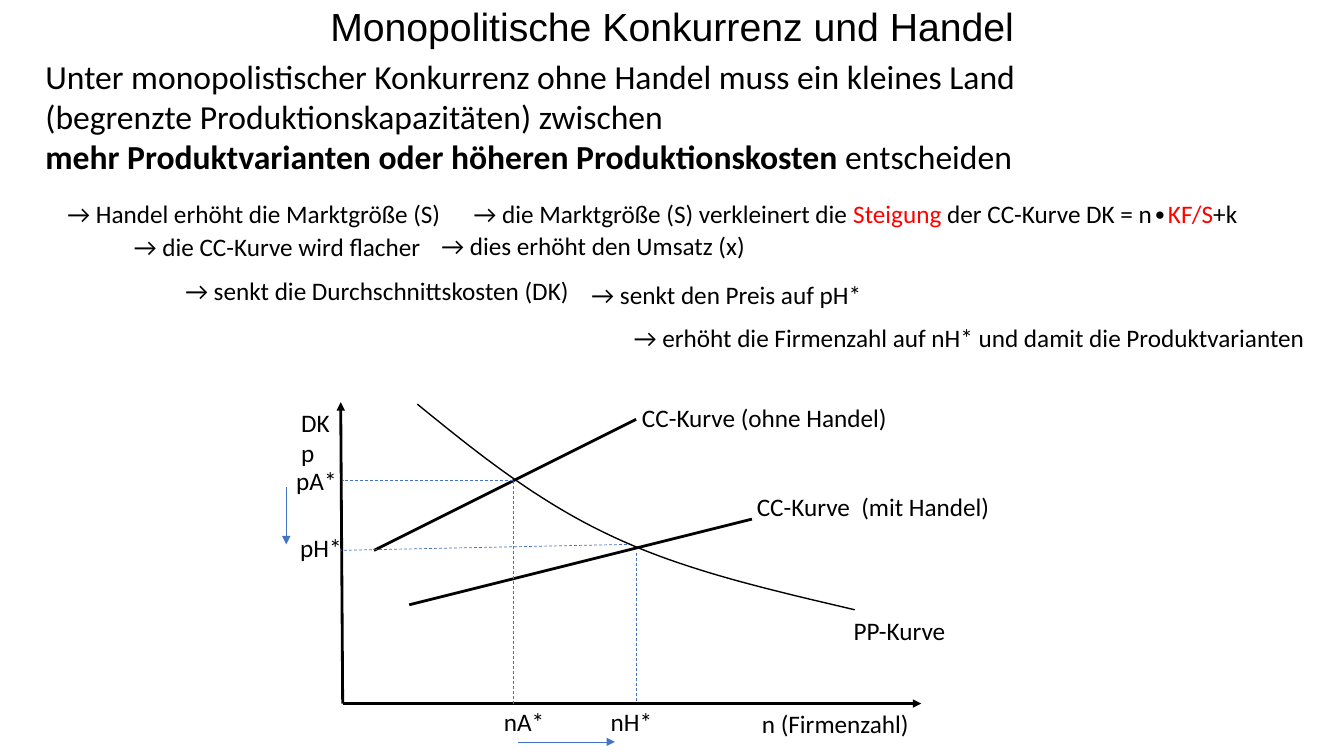
from dataclasses import dataclass

from lxml.etree import SubElement
from pptx import Presentation
from pptx.dml.color import RGBColor
from pptx.enum.dml import MSO_LINE
from pptx.enum.shapes import MSO_CONNECTOR
from pptx.enum.text import MSO_ANCHOR, MSO_AUTO_SIZE, PP_ALIGN
from pptx.oxml.ns import qn
from pptx.util import Inches, Pt

COLORS = {"ink": "000000", "guide": "4472C4", "accent": "FF0000"}

presentation = Presentation()
presentation.slide_width, presentation.slide_height = Inches(13.33), Inches(7.5)
slide = presentation.slides.add_slide(presentation.slide_layouts[1])

# Grid of 40 columns and 30 rows
COLUMN = presentation.slide_width / 40
ROW = presentation.slide_height / 30

Point = tuple[float, float]
Run = tuple[str, dict]


@dataclass
class Label:
    column: float
    row: float
    columns: float
    paragraphs: list[list[Run]]
    rows: float = 1.6


@dataclass
class Stroke:
    start: Point
    end: Point
    color: str = "ink"
    width: float = 2
    arrow: bool = False
    dashed: bool = False


def to_emu(point: Point) -> tuple[int, int]:
    return round(point[0] * COLUMN), round(point[1] * ROW)


def place(shape, column: float, row: float, columns: float, rows: float) -> None:
    shape.left, shape.top = to_emu((column, row))
    shape.width, shape.height = to_emu((columns, rows))


def apply(target, values: dict) -> None:
    for name, value in values.items():
        setattr(target, name, value)


def add_runs(paragraph, runs: list[Run], size: float, font: str = "Calibri") -> None:
    for text, changes in runs:
        values = {"name": font, "size": Pt(size), "bold": False, **changes}
        color = values.pop("color", "ink")
        run = paragraph.add_run()
        run.text = text
        apply(run.font, values)
        run.font.color.rgb = RGBColor.from_string(COLORS[color])


def fill_frame(frame, paragraphs: list[list[Run]], size: float) -> None:
    for index, runs in enumerate(paragraphs):
        paragraph = frame.add_paragraph() if index else frame.paragraphs[0]
        apply(paragraph, {"alignment": PP_ALIGN.LEFT, "line_spacing": 1.0,
                          "space_before": Pt(0), "space_after": Pt(0)})
        add_runs(paragraph, runs, size)


def add_label(label: Label) -> None:
    box = slide.shapes.add_textbox(0, 0, 0, 0)
    place(box, label.column, label.row, label.columns, label.rows)
    apply(box.text_frame, {"word_wrap": False, "auto_size": MSO_AUTO_SIZE.SHAPE_TO_FIT_TEXT})
    fill_frame(box.text_frame, label.paragraphs, 18)


def add_stroke(stroke: Stroke) -> None:
    connector = slide.shapes.add_connector(
        MSO_CONNECTOR.STRAIGHT, *to_emu(stroke.start), *to_emu(stroke.end))
    connector.line.color.rgb = RGBColor.from_string(COLORS[stroke.color])
    connector.line.width = Pt(stroke.width)
    if stroke.dashed:
        connector.line.dash_style = MSO_LINE.DASH
    if stroke.arrow:
        SubElement(connector.line._get_or_add_ln(), qn("a:tailEnd"), type="triangle")
    SubElement(connector._element.spPr, qn("a:effectLst"))


def bezier(points: list[Point], steps: int = 24) -> list[Point]:
    """Points along a cubic curve, without its start."""
    def at(share: float) -> Point:
        rest = 1 - share
        weights = rest**3, 3 * rest**2 * share, 3 * rest * share**2, share**3
        return (sum(weight * point[0] for weight, point in zip(weights, points)),
                sum(weight * point[1] for weight, point in zip(weights, points)))
    return [at(step / steps) for step in range(1, steps + 1)]


def add_curve(controls: list[Point]) -> None:
    points = [point for first in range(0, len(controls) - 1, 3)
              for point in bezier(controls[first:first + 4])]
    builder = slide.shapes.build_freeform(*to_emu(controls[0]))
    builder.add_line_segments([to_emu(point) for point in points], close=False)
    curve = builder.convert_to_shape()
    curve.fill.background()
    curve.line.color.rgb = RGBColor.from_string(COLORS["ink"])
    curve.line.width = Pt(1)
    curve.shadow.inherit = False


def plain(*lines: str) -> list[list[Run]]:
    return [[(line, {})] for line in lines]


# Title
title = slide.shapes.title
place(title, 5, -0.24, 30, 2.8)
apply(title.text_frame, {"vertical_anchor": MSO_ANCHOR.MIDDLE, "word_wrap": True,
                         "auto_size": MSO_AUTO_SIZE.NONE})
heading = title.text_frame.paragraphs[0]
apply(heading, {"alignment": PP_ALIGN.CENTER, "line_spacing": 0.9})
add_runs(heading, [("Monopolitische Konkurrenz und Handel", {})], 28, "Arial")

# Statement
body = slide.placeholders[1]
place(body, 1.05, 2, 30, 24.16)
apply(body.text_frame, {"word_wrap": True, "auto_size": MSO_AUTO_SIZE.NONE})
fill_frame(body.text_frame, [
    [("Unter monopolistischer Konkurrenz ohne Handel muss ein kleines Land "
      "(begrenzte Produktionskapazitäten) zwischen", {})],
    [("mehr Produktvarianten oder höheren Produktionskosten ", {"bold": True}),
     ("entscheiden", {})],
], 24)
for paragraph in body.text_frame.paragraphs:
    properties = paragraph._p.get_or_add_pPr()
    properties.set("marL", "0")
    properties.set("indent", "0")
    SubElement(properties, qn("a:buNone"))

# Chain of effects
EFFECTS = [
    Label(1.71, 7.68, 11.85, plain("→ Handel erhöht die Marktgröße (S)")),
    Label(13.8, 7.68, 23.6, [[
        ("→ die Marktgröße (S) verkleinert die ", {}), ("Steigung", {"color": "accent"}),
        (" der CC-Kurve DK = n∙", {}), ("KF/S", {"color": "accent"}), ("+k", {})]]),
    Label(3.69, 9, 9.24, plain("→ die CC-Kurve wird flacher")),
    Label(12.84, 8.96, 9.75, plain("→ dies erhöht den Umsatz (x)")),
    Label(5.22, 10.72, 12.18, plain("→ senkt die Durchschnittskosten (DK)")),
    Label(17.31, 10.88, 8.73, plain("→ senkt den Preis auf pH*")),
    Label(18.57, 12.6, 20.82,
          plain("→ erhöht die Firmenzahl auf nH* und damit die Produktvarianten")),
]

# Diagram labels
DIAGRAM_LABELS = [
    Label(22.38, 27.92, 5.04, plain("n (Firmenzahl)")),
    Label(8.67, 15.96, 1.47, plain("DK", "p"), 2.84),
    Label(25.11, 24.24, 3.39, plain("PP-Kurve")),
    Label(18.81, 15.76, 7.98, plain("CC-Kurve (ohne Handel)")),
    Label(22.23, 19.32, 7.62, plain("CC-Kurve  (mit Handel)")),
    Label(14.7, 27.84, 1.83, plain("nA*")),
    Label(8.52, 18.28, 1.83, plain("pA*")),
    Label(8.64, 20.92, 1.86, plain("pH*")),
    Label(17.88, 27.84, 1.86, plain("nH*")),
]

# Axes, cost lines, guides and shifts
ORIGIN = (10.2, 27.92)
AUTARKY = (15.27, 19.08)
GUIDE = {"color": "guide", "width": 0.5, "dashed": True}
SHIFT = {"color": "guide", "width": 0.5, "arrow": True}
STROKES = [
    Stroke(ORIGIN, (10.14, 15.96), arrow=True),
    Stroke(ORIGIN, (27.42, 27.92), arrow=True),
    Stroke((11.13, 21.84), (18.93, 16.64)),
    Stroke((12.18, 24), (22.38, 20.6)),
    Stroke(AUTARKY, (ORIGIN[0], AUTARKY[1]), **GUIDE),
    Stroke((AUTARKY[0], ORIGIN[1]), AUTARKY, **GUIDE),
    Stroke((18.81, 21.6), (10.14, 21.84), **GUIDE),
    Stroke((18.93, 27.8), (18.93, 21.92), **GUIDE),
    Stroke((8.52, 19.32), (8.52, 21.6), **SHIFT),
    Stroke((15.42, 29.44), (18.3, 29.44), **SHIFT),
]

for stroke in STROKES:
    add_stroke(stroke)
add_curve([(12.42, 16.04), (14.22, 18), (16.02, 19.92), (18.21, 21.28),
           (20.37, 22.64), (22.89, 23.4), (25.44, 24.2)])
for label in EFFECTS + DIAGRAM_LABELS:
    add_label(label)

presentation.save("out.pptx")
